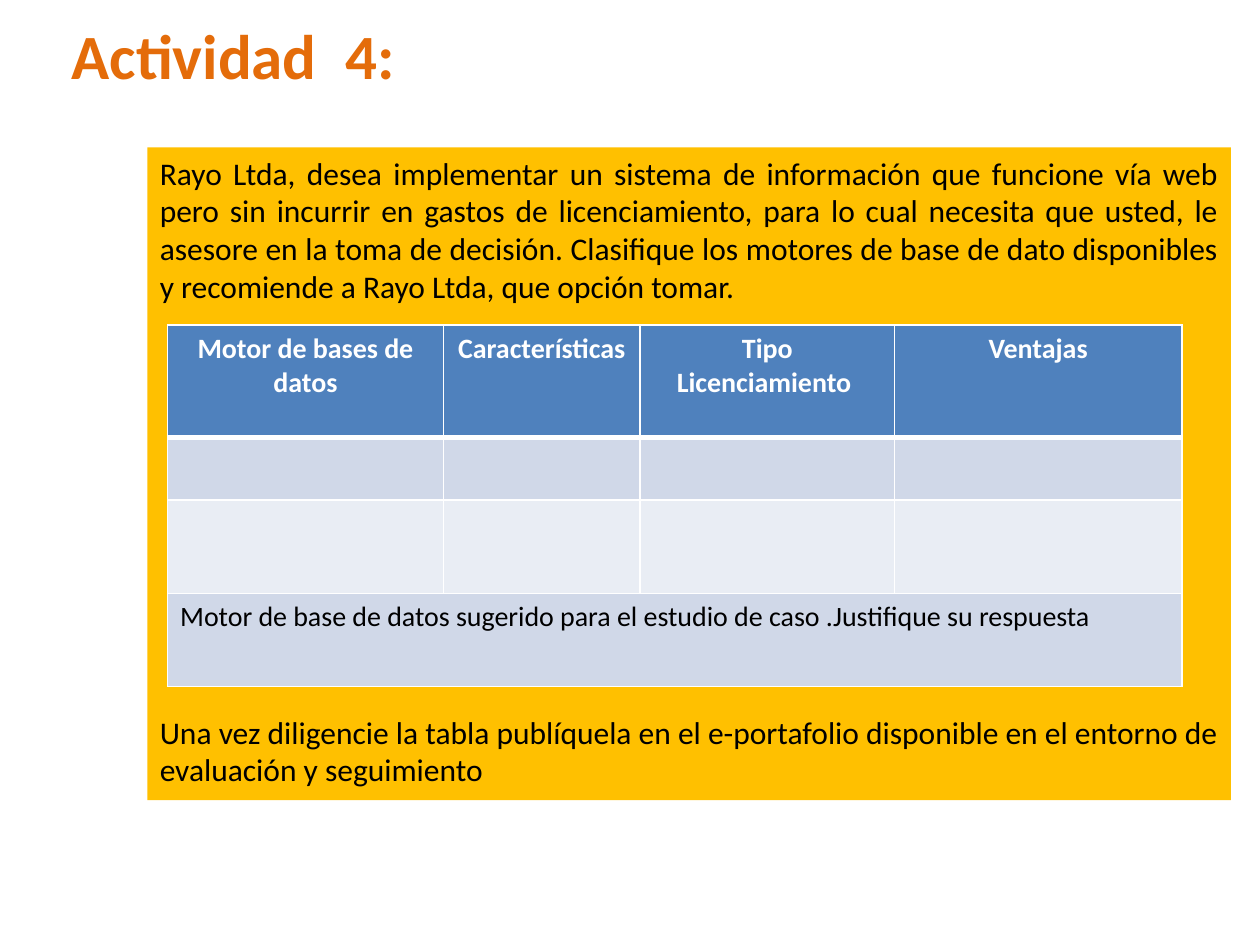
from typing import NamedTuple

from lxml.etree import SubElement
from pptx import Presentation
from pptx.dml.color import RGBColor
from pptx.enum.shapes import MSO_SHAPE as Preset
from pptx.enum.text import MSO_ANCHOR as Anchor, PP_ALIGN as Align
from pptx.oxml.ns import qn
from pptx.util import Inches, Pt

COLORS = {
    "title": "E46C0A",
    "panel": "FFC000",
    "header": "4F81BD",
    "odd": "D0D8E8",
    "even": "E9EDF4",
    "white": "FFFFFF",
    "black": "000000",
}
SLIDE_WIDTH, SLIDE_HEIGHT = Inches(10), Inches(7.5)


class Area(NamedTuple):
    left: float
    top: float
    width: float
    height: float

    def lengths(self) -> tuple:
        return (across(self.left), down(self.top), across(self.width), down(self.height))


class Row(NamedTuple):
    height: float
    fill: str
    texts: tuple = ()
    rule: float = 1


TITLE_AREA = Area(4.7, 1.07, 68.1, 25.2)
PANEL_AREA = Area(11.7, 15.6, 86, 69.07)
TABLE_AREA = Area(13.3, 34.4, 80.5, 38.28)
COLUMN_WIDTHS = (21.9, 15.6, 20.2, 22.8)

TITLE = "Actividad  4:"
ASSIGNMENT = (
    "Rayo Ltda, desea implementar un sistema de información que funcione vía web "
    "pero sin incurrir en gastos de licenciamiento, para lo cual necesita que usted, "
    "le asesore en la toma de decisión. Clasifique los motores de base de dato "
    "disponibles y recomiende a Rayo Ltda, que opción tomar."
)
DELIVERY = (
    "Una vez diligencie la tabla publíquela en el e-portafolio disponible "
    "en el entorno de evaluación y seguimiento"
)
SUGGESTION = "Motor de base de datos sugerido para el estudio de caso .Justifique su respuesta"
HEADINGS = ("Motor de bases de datos", "Características", "Tipo Licenciamiento ", "Ventajas")
ROWS = (
    Row(11.87, "header", HEADINGS, rule=3),
    Row(6.67, "odd"),
    Row(9.87, "even"),
    Row(9.87, "odd", (SUGGESTION,)),
)


def across(percent: float) -> int:
    return round(SLIDE_WIDTH * percent / 100)


def down(percent: float) -> int:
    return round(SLIDE_HEIGHT * percent / 100)


def write(paragraph, text: str, *, size: float = 18, color: str = "black",
          bold: bool = False, align=Align.LEFT, before: float = 0) -> None:
    paragraph.alignment = align
    paragraph.space_before = Pt(before)
    run = paragraph.add_run()
    run.text = text
    run.font.name = "Calibri"
    run.font.size = Pt(size)
    run.font.bold = bold
    run.font.color.rgb = RGBColor.from_string(COLORS[color])


def draw_borders(cell, bottom: float, top: float) -> None:
    properties = cell._tc.get_or_add_tcPr()
    for position, (side, width) in enumerate(
        (("a:lnL", 1), ("a:lnR", 1), ("a:lnT", top), ("a:lnB", bottom))
    ):
        line = properties.makeelement(qn(side), {"w": str(Pt(width))})
        properties.insert(position, line)
        SubElement(SubElement(line, qn("a:solidFill")), qn("a:srgbClr"), val=COLORS["white"])


def draw_title(slide) -> None:
    frame = slide.shapes.add_textbox(*TITLE_AREA.lengths()).text_frame
    frame.word_wrap = True
    write(frame.paragraphs[0], TITLE, size=36, color="title", bold=True)


def draw_panel(slide) -> None:
    panel = slide.shapes.add_shape(Preset.RECTANGLE, *PANEL_AREA.lengths())
    panel.shadow.inherit = False
    panel.fill.solid()
    panel.fill.fore_color.rgb = RGBColor.from_string(COLORS["panel"])
    panel.line.fill.background()
    frame = panel.text_frame
    frame.word_wrap = True
    frame.vertical_anchor = Anchor.TOP
    write(frame.paragraphs[0], ASSIGNMENT, align=Align.JUSTIFY)
    write(frame.add_paragraph(), DELIVERY, align=Align.JUSTIFY, before=233)


def draw_table(slide) -> None:
    table = slide.shapes.add_table(
        len(ROWS), len(COLUMN_WIDTHS), *TABLE_AREA.lengths()
    ).table
    for column, width in zip(table.columns, COLUMN_WIDTHS):
        column.width = across(width)
    rule_above = 1
    for index, row in enumerate(ROWS):
        table.rows[index].height = down(row.height)
        for cell in table.rows[index].cells:
            cell.fill.solid()
            cell.fill.fore_color.rgb = RGBColor.from_string(COLORS[row.fill])
            draw_borders(cell, row.rule, rule_above)
        heading = row.fill == "header"
        for column, text in enumerate(row.texts):
            write(
                table.cell(index, column).text_frame.paragraphs[0], text, size=16,
                color="white" if heading else "black", bold=heading,
                align=Align.CENTER if heading else Align.LEFT,
            )
        rule_above = row.rule
    last = len(ROWS) - 1
    table.cell(last, 0).merge(table.cell(last, len(COLUMN_WIDTHS) - 1))


def main() -> None:
    deck = Presentation()
    deck.slide_width, deck.slide_height = SLIDE_WIDTH, SLIDE_HEIGHT
    slide = deck.slides.add_slide(deck.slide_layouts[6])
    draw_title(slide)
    draw_panel(slide)
    draw_table(slide)
    deck.save("out.pptx")


if __name__ == "__main__":
    main()
